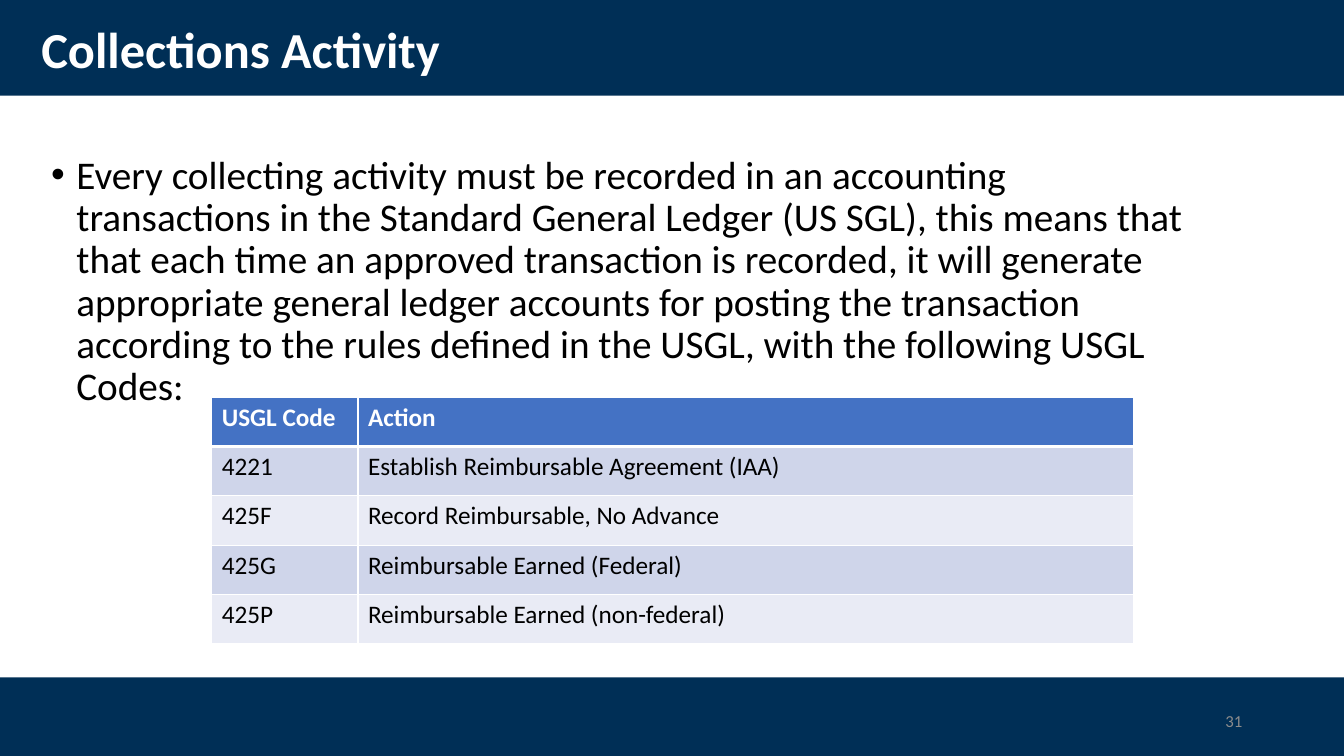
from dataclasses import dataclass

from lxml import etree
from pptx import Presentation
from pptx.dml.color import RGBColor
from pptx.enum.shapes import MSO_SHAPE
from pptx.enum.text import MSO_ANCHOR, MSO_AUTO_SIZE, PP_ALIGN
from pptx.oxml.ns import qn
from pptx.util import Inches, Pt

RECTANGLE = MSO_SHAPE.RECTANGLE
MIDDLE = MSO_ANCHOR.MIDDLE
NO_AUTOFIT = MSO_AUTO_SIZE.NONE
LEFT, RIGHT = PP_ALIGN.LEFT, PP_ALIGN.RIGHT


@dataclass(frozen=True)
class Theme:
    font: str = "Calibri"
    navy: str = "002F56"
    white: str = "FFFFFF"
    black: str = "000000"
    gray: str = "8C8C8C"
    header: str = "4472C4"
    bands: tuple = ("CFD5EA", "E9EBF5")
    title_size: int = 36
    body_size: int = 28
    table_size: int = 18
    number_size: int = 12


THEME = Theme()


def add_run(paragraph, text, size, color, bold=False):
    run = paragraph.add_run()
    run.text = text
    run.font.name = THEME.font
    run.font.size = Pt(size)
    run.font.bold = bold
    run.font.color.rgb = RGBColor.from_string(color)


def add_border(cell, side, width):
    """Draw a white line on one side (L, R, T or B) of a table cell."""
    properties = cell._tc.get_or_add_tcPr()
    line = etree.SubElement(properties, qn(f"a:ln{side}"), w=str(Pt(width)))
    fill = etree.SubElement(line, qn("a:solidFill"))
    etree.SubElement(fill, qn("a:srgbClr"), val=THEME.white)


presentation = Presentation()
presentation.slide_width = Inches(13.33)
presentation.slide_height = Inches(7.5)
slide = presentation.slides.add_slide(presentation.slide_layouts[5])
title = slide.shapes.title

# Navy bars, placed behind the title
for top, height in ((0, 0.95), (6.72, 0.8)):
    bar = slide.shapes.add_shape(
        RECTANGLE, 0, Inches(top), presentation.slide_width, Inches(height))
    bar.shadow.inherit = False
    bar.fill.solid()
    bar.fill.fore_color.rgb = RGBColor.from_string(THEME.navy)
    bar.line.fill.background()
    title._element.addprevious(bar._element)

# Title
title.left, title.top = Inches(0.31), Inches(0.18)
title.width, title.height = Inches(11.5), Inches(0.68)
title.text_frame.auto_size = NO_AUTOFIT
title.text_frame.vertical_anchor = MIDDLE
paragraph = title.text_frame.paragraphs[0]
paragraph.alignment = LEFT
paragraph.line_spacing = 0.9
add_run(paragraph, "Collections Activity", THEME.title_size, THEME.white, bold=True)

# Bulleted explanation
body = slide.shapes.add_textbox(Inches(0.41), Inches(1.49), Inches(11.5), Inches(4.76))
body.text_frame.word_wrap = True
paragraph = body.text_frame.paragraphs[0]
paragraph.line_spacing = 0.9
properties = paragraph._p.get_or_add_pPr()
properties.set("marL", str(Inches(0.25)))
properties.set("indent", str(Inches(-0.25)))
etree.SubElement(properties, qn("a:buFont"), typeface="Arial")
etree.SubElement(properties, qn("a:buChar"), char="•")
add_run(
    paragraph,
    "Every collecting activity must be recorded in an accounting transactions in the "
    "Standard General Ledger (US SGL), this means that that each time an approved "
    "transaction is recorded, it will generate appropriate general ledger accounts for "
    "posting the transaction according to the rules defined in the USGL, with the "
    "following USGL Codes:",
    THEME.body_size, THEME.black)

# Slide number
number = slide.shapes.add_textbox(Inches(9.42), Inches(6.95), Inches(3), Inches(0.4))
number.text_frame.word_wrap = True
number.text_frame.vertical_anchor = MIDDLE
paragraph = number.text_frame.paragraphs[0]
paragraph.alignment = RIGHT
add_run(paragraph, "31", THEME.number_size, THEME.gray)

# Table of codes
code_rows = (
    ("USGL Code", "Action"),
    ("4221", "Establish Reimbursable Agreement (IAA)"),
    ("425F", "Record Reimbursable, No Advance"),
    ("425G", "Reimbursable Earned (Federal)"),
    ("425P", "Reimbursable Earned (non-federal)"),
)
column_widths = (1.45, 7.69)
row_height = 0.49
table = slide.shapes.add_table(
    len(code_rows), len(column_widths), Inches(2.1), Inches(3.94),
    Inches(sum(column_widths)), Inches(row_height * len(code_rows))).table
for column, width in zip(table.columns, column_widths):
    column.width = Inches(width)

for row_index, texts in enumerate(code_rows):
    is_header = row_index == 0
    fill_color = THEME.header if is_header else THEME.bands[(row_index - 1) % 2]
    text_color = THEME.white if is_header else THEME.black
    table.rows[row_index].height = Inches(row_height)
    for column_index, text in enumerate(texts):
        cell = table.cell(row_index, column_index)
        add_border(cell, "L", 1)
        add_border(cell, "R", 1)
        add_border(cell, "T", 3 if row_index == 1 else 1)
        add_border(cell, "B", 3 if is_header else 1)
        cell.fill.solid()
        cell.fill.fore_color.rgb = RGBColor.from_string(fill_color)
        add_run(cell.text_frame.paragraphs[0], text,
                THEME.table_size, text_color, bold=is_header)

presentation.save("out.pptx")
